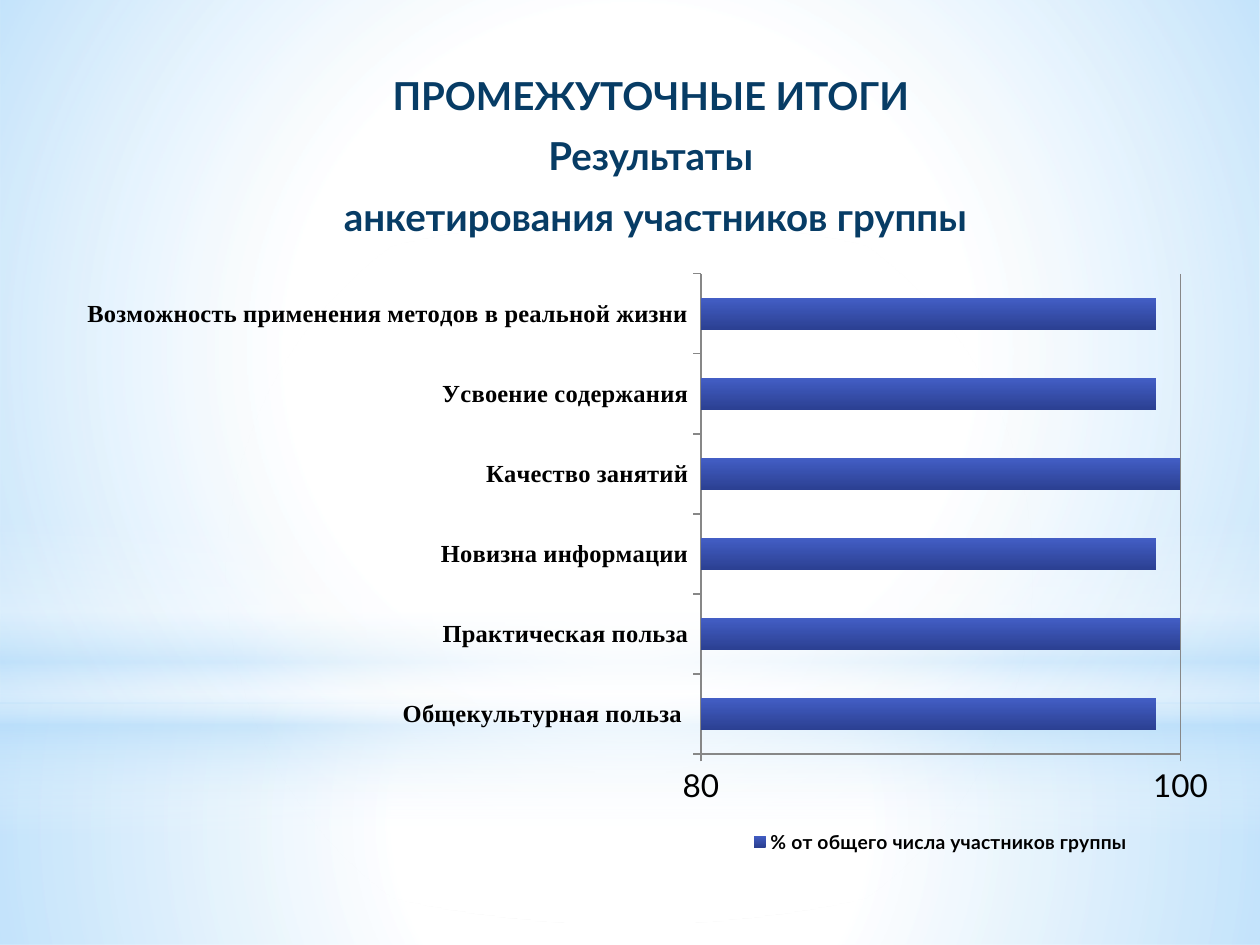
import pptx
import pptx.chart.data
import pptx.dml.color
import pptx.enum.chart
import pptx.enum.shapes
import pptx.enum.text
import pptx.oxml
import pptx.oxml.ns
import pptx.util

RGBColor = pptx.dml.color.RGBColor
WHITE = RGBColor(0xFF, 0xFF, 0xFF)
SKY = RGBColor(0xB4, 0xDC, 0xFA)
NAVY = RGBColor(0x07, 0x3C, 0x65)
BLACK = RGBColor(0, 0, 0)
GRAY = RGBColor(0x87, 0x87, 0x87)
BAR_LIGHT = RGBColor(0x43, 0x5E, 0xC5)
BAR_DARK = RGBColor(0x2B, 0x40, 0x92)

WIDTH = pptx.util.Inches(10)
HEIGHT = pptx.util.Inches(7.5)
RECTANGLE = pptx.enum.shapes.MSO_SHAPE.RECTANGLE
OVAL = pptx.enum.shapes.MSO_SHAPE.OVAL
RADIAL = (
    '<a:path path="circle"><a:fillToRect l="50000" t="50000" '
    'r="50000" b="50000"/></a:path>'
)
DOWNWARD = '<a:lin ang="5400000" scaled="0"/>'

BACKDROP = [
    (RECTANGLE, (0, 0.744, 1, 0.256), RADIAL,
     [(0, WHITE, 91), (37, WHITE, 76), (100, SKY, 79)]),
    (RECTANGLE, (0, 0, 1, 0.744), RADIAL,
     [(0, WHITE, 89), (48, WHITE, 62), (100, SKY, 79)]),
    (RECTANGLE, (0, 0.55, 1, 0.333), DOWNWARD,
     [(0, WHITE, 0), (29, WHITE, 30), (45, SKY, 40),
      (55, WHITE, 26), (65, SKY, 60), (100, WHITE, 0)]),
    (OVAL, (0, 0.233, 1, 0.744), RADIAL,
     [(0, WHITE, 100), (56, WHITE, 0)]),
]
HEADING = ["ПРОМЕЖУТОЧНЫЕ ИТОГИ", "Результаты", " анкетирования участников группы"]
SERIES_NAME = "% от общего числа участников группы"
SCORES = {
    "Общекультурная польза ": 99,
    "Практическая польза": 100,
    "Новизна информации": 99,
    "Качество занятий": 100,
    "Усвоение содержания": 99,
    "Возможность применения методов в реальной жизни": 99,
}


def place(box):
    left, top, width, height = box
    return (int(left * WIDTH), int(top * HEIGHT),
            int(width * WIDTH), int(height * HEIGHT))


def set_gradient(fill, owner, stops, direction):
    fill.gradient()
    gradient = owner.find(".//" + pptx.oxml.ns.qn("a:gradFill"))
    stop_xml = "".join(
        f'<a:gs pos="{position * 1000}"><a:srgbClr val="{color}">'
        f'<a:alpha val="{opacity * 1000}"/></a:srgbClr></a:gs>'
        for position, color, opacity in stops
    )
    namespace = pptx.oxml.ns.nsdecls("a")
    replacement = pptx.oxml.parse_xml(
        f'<a:gradFill {namespace} rotWithShape="1">'
        f"<a:gsLst>{stop_xml}</a:gsLst>{direction}</a:gradFill>"
    )
    gradient.getparent().replace(gradient, replacement)


def set_layout(element, box, inner=False):
    layout = element.find(pptx.oxml.ns.qn("c:layout"))
    target = '<c:layoutTarget val="inner"/>' if inner else ""
    sizes = "".join(
        f'<c:{name} val="{share}"/>' for name, share in zip("xywh", box)
    )
    replacement = pptx.oxml.parse_xml(
        f'<c:layout {pptx.oxml.ns.nsdecls("c")}><c:manualLayout>{target}'
        f'<c:xMode val="edge"/><c:yMode val="edge"/>{sizes}'
        "</c:manualLayout></c:layout>"
    )
    if layout is not None:
        element.replace(layout, replacement)
    elif inner:
        element.insert(0, replacement)
    else:
        element.find(pptx.oxml.ns.qn("c:legendPos")).addnext(replacement)


def set_font(font, name, size, color, bold):
    font.name = name
    font.size = pptx.util.Pt(size)
    font.color.rgb = color
    font.bold = bold


def add_backdrop(slide):
    slide.background.fill.solid()
    slide.background.fill.fore_color.rgb = WHITE
    for kind, box, direction, stops in BACKDROP:
        shape = slide.shapes.add_shape(kind, *place(box))
        shape.shadow.inherit = False
        shape.line.fill.background()
        set_gradient(shape.fill, shape._element, stops, direction)


def add_heading(slide, box):
    frame = slide.shapes.add_textbox(*place(box)).text_frame
    frame.word_wrap = True
    frame.vertical_anchor = pptx.enum.text.MSO_ANCHOR.TOP
    frame.text = "\n".join(HEADING)
    for paragraph in frame.paragraphs:
        paragraph.alignment = pptx.enum.text.PP_ALIGN.CENTER
        paragraph.space_before = pptx.util.Pt(5)
        paragraph.space_after = pptx.util.Pt(3)
        properties = paragraph._p.get_or_add_pPr()
        properties.set("marL", str(pptx.util.Inches(0.25)))
        properties.set("indent", str(pptx.util.Inches(-0.2)))
        set_font(paragraph.font, "Lato", 22, NAVY, True)


def add_survey_chart(slide, box):
    data = pptx.chart.data.CategoryChartData()
    data.categories = list(SCORES)
    data.add_series(SERIES_NAME, list(SCORES.values()))
    chart = slide.shapes.add_chart(
        pptx.enum.chart.XL_CHART_TYPE.BAR_CLUSTERED, *place(box), data
    ).chart
    chart.has_title = False
    set_font(chart.font, "Lato", 18, BLACK, False)

    plot = chart.plots[0]
    plot.gap_width = 150
    plot.vary_by_categories = False
    series = plot.series[0]
    set_gradient(series.format.fill, series._element,
                 [(0, BAR_LIGHT, 100), (100, BAR_DARK, 100)], DOWNWARD)

    for axis in (chart.category_axis, chart.value_axis):
        axis.major_tick_mark = pptx.enum.chart.XL_TICK_MARK.OUTSIDE
        axis.minor_tick_mark = pptx.enum.chart.XL_TICK_MARK.NONE
        axis.format.line.color.rgb = GRAY
    set_font(chart.category_axis.tick_labels.font,
             "Times New Roman", 14, BLACK, True)
    chart.value_axis.minimum_scale = 80
    chart.value_axis.maximum_scale = 100
    chart.value_axis.major_unit = 20
    chart.value_axis.has_major_gridlines = True
    chart.value_axis.major_gridlines.format.line.color.rgb = GRAY

    chart.has_legend = True
    legend = chart.legend
    legend.position = pptx.enum.chart.XL_LEGEND_POSITION.RIGHT
    legend.include_in_layout = False
    set_font(legend.font, "Lato", 11, BLACK, True)
    set_layout(legend._element, (0.6, 0.9, 0.33, 0.08))
    plot_area = chart._chartSpace.chart.plotArea
    set_layout(plot_area, (0.57, 0.03, 0.39, 0.77), inner=True)


def main():
    presentation = pptx.Presentation()
    presentation.slide_width = WIDTH
    presentation.slide_height = HEIGHT
    slide = presentation.slides.add_slide(presentation.slide_layouts[6])
    add_backdrop(slide)
    add_heading(slide, (0.122, 0.07, 0.784, 0.31))
    add_survey_chart(slide, (0, 0.27, 0.976, 0.66))
    presentation.save("out.pptx")


if __name__ == "__main__":
    main()
